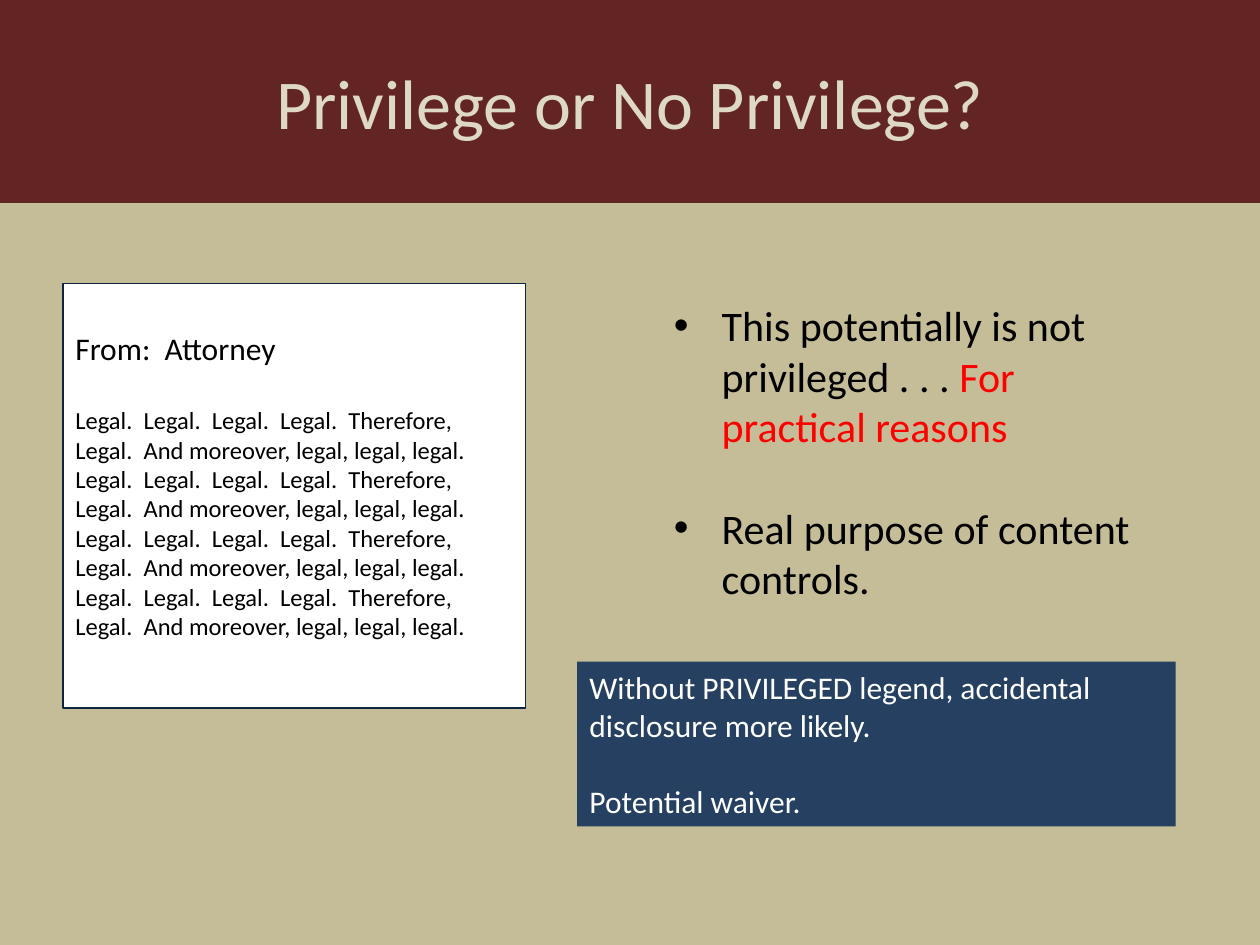
from lxml import etree
from pptx import Presentation
from pptx.dml.color import RGBColor
from pptx.enum import shapes, text
from pptx.oxml.ns import qn
from pptx.util import Inches, Pt

TAN = RGBColor(0xC4, 0xBD, 0x97)
MAROON = RGBColor(0x63, 0x25, 0x23)
CREAM = RGBColor(0xDD, 0xD9, 0xC3)
NAVY = RGBColor(0x25, 0x40, 0x61)
DARK_NAVY = RGBColor(0x0F, 0x24, 0x3E)
WHITE = RGBColor(0xFF, 0xFF, 0xFF)
BLACK = RGBColor(0, 0, 0)
RED = RGBColor(0xFF, 0, 0)


def add_box(slide, left, top, width, height, fill):
    box = slide.shapes.add_shape(
        shapes.MSO_SHAPE.RECTANGLE,
        Inches(left), Inches(top), Inches(width), Inches(height))
    box.shadow.inherit = False
    box.fill.solid()
    box.fill.fore_color.rgb = fill
    box.line.fill.background()
    box.text_frame.word_wrap = True
    box.text_frame.vertical_anchor = text.MSO_ANCHOR.TOP
    return box


def write_paragraphs(frame, paragraphs, align=text.PP_ALIGN.LEFT):
    """Fill the frame from (space before in points, runs) pairs; a run is (words, size, colour)."""
    for index, (space_before, runs) in enumerate(paragraphs):
        paragraph = frame.add_paragraph() if index else frame.paragraphs[0]
        paragraph.alignment = align
        paragraph.space_before = Pt(space_before)
        for words, size, colour in runs:
            run = paragraph.add_run()
            run.text = words
            run.font.name = "Calibri"
            run.font.size = Pt(size)
            run.font.color.rgb = colour


presentation = Presentation()
presentation.slide_width = Inches(10)
presentation.slide_height = Inches(7.5)
slide = presentation.slides.add_slide(presentation.slide_layouts[6])
slide.background.fill.solid()
slide.background.fill.fore_color.rgb = TAN

# Title band
title = add_box(slide, 0, 0, 10, 1.61, MAROON)
title.text_frame.vertical_anchor = text.MSO_ANCHOR.MIDDLE
write_paragraphs(title.text_frame, [(0, [("Privilege or No Privilege?", 40, CREAM)])],
                 text.PP_ALIGN.CENTER)

# Attorney's letter
letter = add_box(slide, 0.5, 2.25, 3.67, 3.37, WHITE)
letter.line.color.rgb = DARK_NAVY
letter.line.width = Pt(0.75)
letter.text_frame.margin_top = Inches(0.36)
legal_text = ("Legal.  Legal.  Legal.  Legal.  Therefore, "
              "Legal.  And moreover, legal, legal, legal.")
letter_body = [(0 if row else 22, [(legal_text, 14, BLACK)]) for row in range(4)]
write_paragraphs(letter.text_frame, [(0, [("From:  Attorney", 18, BLACK)])] + letter_body)

# Bulleted points
points = slide.shapes.add_textbox(Inches(5.25), Inches(2.33), Inches(4), Inches(2.52))
points.text_frame.word_wrap = True
write_paragraphs(points.text_frame, [
    (0, [("This potentially is not privileged . . . ", 24, BLACK),
         ("For practical reasons", 24, RED)]),
    (29.3, [("Real purpose of content controls.", 24, BLACK)]),
])
for paragraph in points.text_frame.paragraphs:
    properties = paragraph._p.get_or_add_pPr()
    properties.set("marL", str(Inches(0.38)))
    properties.set("indent", str(-Inches(0.38)))
    etree.SubElement(properties, qn("a:buFont"), typeface="Arial")
    etree.SubElement(properties, qn("a:buChar"), char="•")

# Warning
warning = add_box(slide, 4.58, 5.25, 4.75, 1.31, NAVY)
write_paragraphs(warning.text_frame, [
    (0, [("Without PRIVILEGED legend, accidental disclosure more likely.", 18, WHITE)]),
    (22, [("Potential waiver.", 18, WHITE)]),
])

presentation.save("out.pptx")
